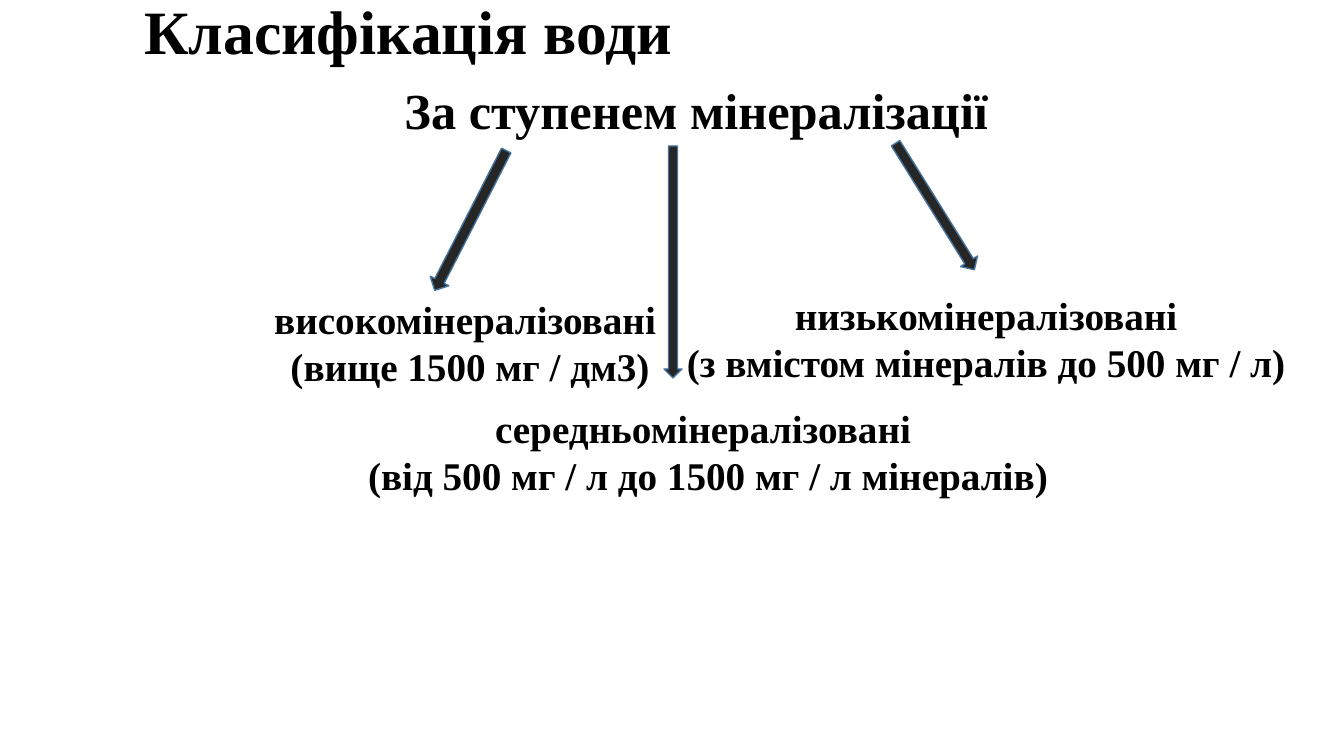
from dataclasses import dataclass

from lxml import etree
from pptx import Presentation, util as u
from pptx.dml.color import RGBColor
from pptx.enum import shapes, text
from pptx.oxml.ns import qn

PX = 914400 / 100.8


@dataclass(frozen=True)
class Theme:
    font: str = "Times New Roman"
    ink: str = "000000"
    arrow_fill: str = "262626"
    arrow_line: str = "43739E"
    title_size: int = 44
    heading_size: int = 36
    label_size: int = 28


THEME = Theme()


def px(length):
    return u.Emu(round(length * PX))


def place(shape, box):
    shape.left, shape.top, shape.width, shape.height = map(px, box)


def write(shape, lines, size, align=text.PP_ALIGN.CENTER, spacing=None,
          anchor=text.MSO_ANCHOR.TOP, wrap=True, fit=text.MSO_AUTO_SIZE.NONE):
    frame = shape.text_frame
    frame.word_wrap = wrap
    frame.auto_size = fit
    frame.vertical_anchor = anchor
    frame.text = "\n".join(lines)
    for paragraph in frame.paragraphs:
        properties = paragraph._p.get_or_add_pPr()
        properties.set("marL", "0")
        properties.set("indent", "0")
        etree.SubElement(properties, qn("a:buNone"))
        paragraph.alignment = align
        paragraph.line_spacing = spacing
        paragraph.space_before = u.Pt(0)
        for run in paragraph.runs:
            run.font.name = THEME.font
            run.font.size = u.Pt(size)
            run.font.bold = True
            run.font.color.rgb = RGBColor.from_string(THEME.ink)


def add_headings(slide, title_box, body_box):
    title, body = slide.shapes.title, slide.placeholders[1]
    place(title, title_box)
    write(title, ["Класифікація води"], THEME.title_size, spacing=0.9,
          align=text.PP_ALIGN.LEFT, anchor=text.MSO_ANCHOR.MIDDLE)
    place(body, body_box)
    write(body, ["За ступенем мінералізації"], THEME.heading_size, spacing=0.9)


def add_arrow(slide, box, rotation=0):
    arrow = slide.shapes.add_shape(shapes.MSO_SHAPE.DOWN_ARROW, *map(px, box))
    arrow.rotation = rotation
    arrow.shadow.inherit = False
    arrow.fill.solid()
    arrow.fill.fore_color.rgb = RGBColor.from_string(THEME.arrow_fill)
    arrow.line.color.rgb = RGBColor.from_string(THEME.arrow_line)
    arrow.line.width = u.Pt(1)


def add_water_class(slide, box, lines, wrap=True):
    label = slide.shapes.add_textbox(*map(px, box))
    write(label, lines, THEME.label_size, wrap=wrap,
          fit=text.MSO_AUTO_SIZE.SHAPE_TO_FIT_TEXT)


def build_classification(presentation):
    slide = presentation.slides.add_slide(presentation.slide_layouts[1])
    add_headings(slide, (134, -38, 1159, 146), (117, 81, 1159, 480))

    add_arrow(slide, (925, 132, 20, 149), 328.1)
    add_arrow(slide, (664, 146, 18, 232))
    add_arrow(slide, (460, 142, 21, 157), 27.1)

    add_water_class(slide, (92, 290, 756, 105),
                    ["високомінералізовані ", "(вище 1500 мг / дм3)"])
    add_water_class(slide, (78, 399, 1260, 105),
                    ["середньомінералізовані ",
                     "(від 500 мг / л до 1500 мг / л мінералів)"])
    add_water_class(slide, (673, 286, 636, 105),
                    ["низькомінералізовані ",
                     "(з вмістом мінералів до 500 мг / л) "], wrap=False)


def main():
    presentation = Presentation()
    presentation.slide_width, presentation.slide_height = px(1344), px(756)
    build_classification(presentation)
    presentation.save("out.pptx")


if __name__ == "__main__":
    main()
